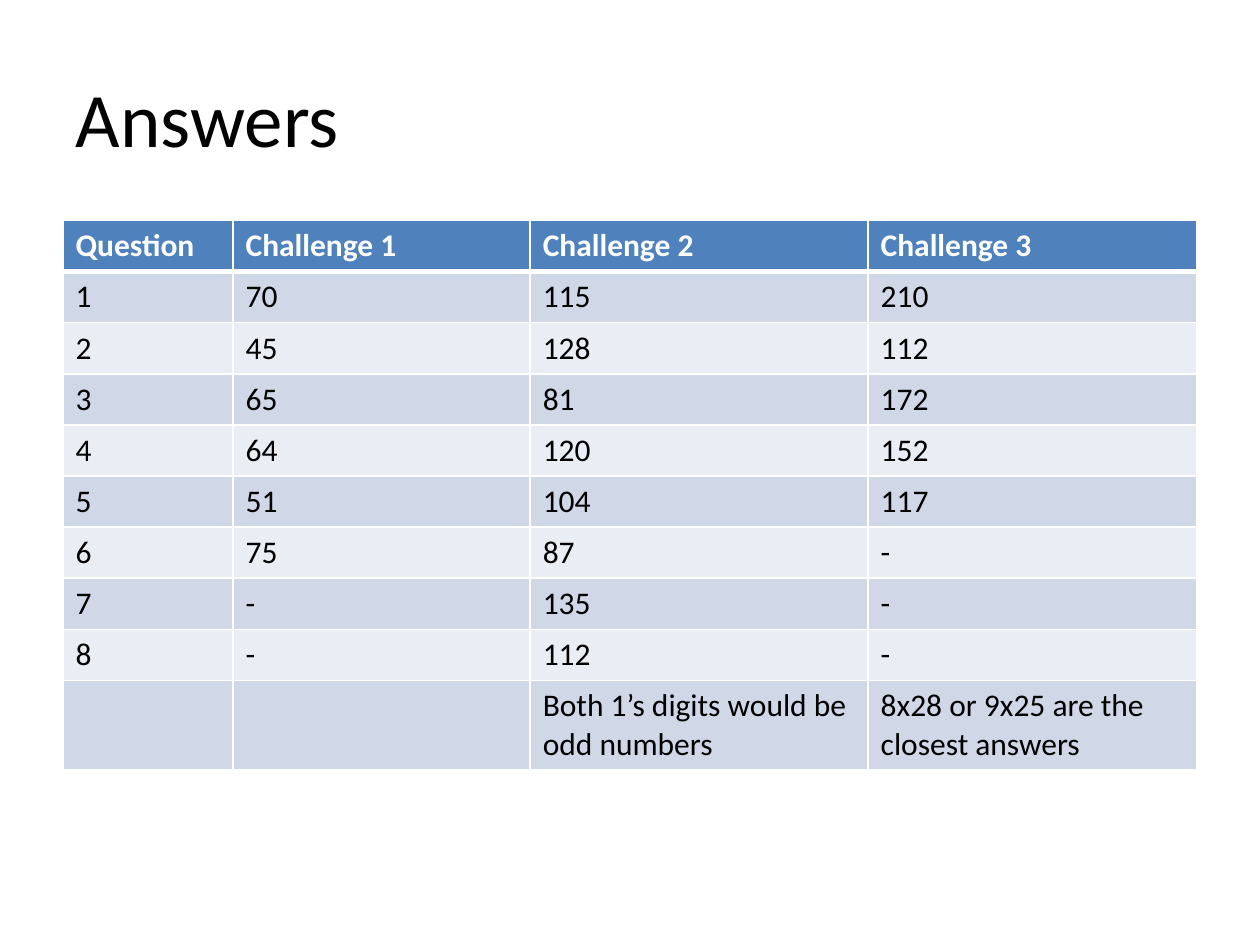
import dataclasses

import pptx
import pptx.dml.color
import pptx.enum.text
import pptx.oxml
import pptx.oxml.ns
import pptx.util


@dataclasses.dataclass(frozen=True)
class Theme:
    font: str = "Calibri"
    title_size: float = 44
    body_size: float = 18
    black: str = "000000"
    white: str = "FFFFFF"
    header: str = "4F81BD"
    bands: tuple[str, str] = ("D0D8E8", "E9EDF4")
    thin_line: float = 1
    header_line: float = 3


@dataclasses.dataclass(frozen=True)
class Box:
    """A frame given as shares of the slide's width and height."""
    left: float
    top: float
    width: float
    height: float


@dataclasses.dataclass(frozen=True)
class RowStyle:
    fill: str
    text: str
    bold: bool
    bottom_line: float


THEME = Theme()
SLIDE_WIDTH = pptx.util.Inches(10)
SLIDE_HEIGHT = pptx.util.Inches(7.5)
TITLE_BOX = Box(0.05, 0.04, 0.9, 1 / 6)
TABLE_BOX = Box(0.05, 7 / 30, 0.9, 0.58)
COLUMN_SHARES = (0.15, 0.262, 0.298, 0.29)
NOTE_ROW_HEIGHT = pptx.util.Inches(0.7)

ANSWERS = (
    ("Question", "Challenge 1", "Challenge 2", "Challenge 3"),
    ("1", "70", "115", "210"),
    ("2", "45", "128", "112"),
    ("3", "65", "81", "172"),
    ("4", "64", "120", "152"),
    ("5", "51", "104", "117"),
    ("6", "75", "87", "-"),
    ("7", "-", "135", "-"),
    ("8", "-", "112", "-"),
    ("", "", "Both 1’s digits would be odd numbers",
     "8x28 or 9x25 are the closest answers"),
)


def frame(box: Box) -> dict[str, int]:
    return {
        "left": round(box.left * SLIDE_WIDTH),
        "top": round(box.top * SLIDE_HEIGHT),
        "width": round(box.width * SLIDE_WIDTH),
        "height": round(box.height * SLIDE_HEIGHT),
    }


def format_font(font, size: float, color: str, bold: bool = False) -> None:
    values = {"name": THEME.font, "size": pptx.util.Pt(size), "bold": bold}
    for name, value in values.items():
        setattr(font, name, value)
    font.color.rgb = pptx.dml.color.RGBColor.from_string(color)


def add_title(slide, text: str) -> None:
    title = slide.shapes.title
    for name, value in frame(TITLE_BOX).items():
        setattr(title, name, value)
    title.text_frame.vertical_anchor = pptx.enum.text.MSO_ANCHOR.MIDDLE
    paragraph = title.text_frame.paragraphs[0]
    paragraph.text = text
    paragraph.alignment = pptx.enum.text.PP_ALIGN.LEFT
    format_font(paragraph.runs[0].font, THEME.title_size, THEME.black)


def add_borders(cell, widths: dict[str, float]) -> None:
    properties = cell._tc.get_or_add_tcPr()
    for side, width in widths.items():
        properties.append(pptx.oxml.parse_xml(
            f'<a:ln{side} {pptx.oxml.ns.nsdecls("a")} w="{pptx.util.Pt(width)}">'
            f'<a:solidFill><a:srgbClr val="{THEME.white}"/></a:solidFill>'
            f'</a:ln{side}>'))


def row_style(index: int) -> RowStyle:
    if index == 0:
        return RowStyle(THEME.header, THEME.white, True, THEME.header_line)
    return RowStyle(THEME.bands[(index - 1) % 2], THEME.black, False, THEME.thin_line)


def fill_cell(cell, text: str, index: int) -> None:
    style = row_style(index)
    # The line above a row is the bottom line of the row before it
    top_line = row_style(index - 1).bottom_line if index else THEME.thin_line
    add_borders(cell, {"L": THEME.thin_line, "R": THEME.thin_line,
                       "T": top_line, "B": style.bottom_line})
    cell.fill.solid()
    cell.fill.fore_color.rgb = pptx.dml.color.RGBColor.from_string(style.fill)
    if text:
        cell.text = text
        run = cell.text_frame.paragraphs[0].runs[0]
        format_font(run.font, THEME.body_size, style.text, style.bold)


def add_answer_table(slide) -> None:
    place = frame(TABLE_BOX)
    table = slide.shapes.add_table(len(ANSWERS), len(ANSWERS[0]), **place).table

    # Grid: equal rows, with a taller last row for the notes
    for column, share in zip(table.columns, COLUMN_SHARES):
        column.width = round(share * place["width"])
    row_height = (place["height"] - NOTE_ROW_HEIGHT) // (len(ANSWERS) - 1)
    for row in table.rows:
        row.height = row_height
    table.rows[len(ANSWERS) - 1].height = NOTE_ROW_HEIGHT

    # Cells
    for index, texts in enumerate(ANSWERS):
        for column_index, text in enumerate(texts):
            fill_cell(table.cell(index, column_index), text, index)


def main() -> None:
    presentation = pptx.Presentation()
    presentation.slide_width = SLIDE_WIDTH
    presentation.slide_height = SLIDE_HEIGHT
    title_only = presentation.slide_layouts.get_by_name("Title Only")
    slide = presentation.slides.add_slide(title_only)
    add_title(slide, "Answers")
    add_answer_table(slide)
    presentation.save("out.pptx")


if __name__ == "__main__":
    main()
